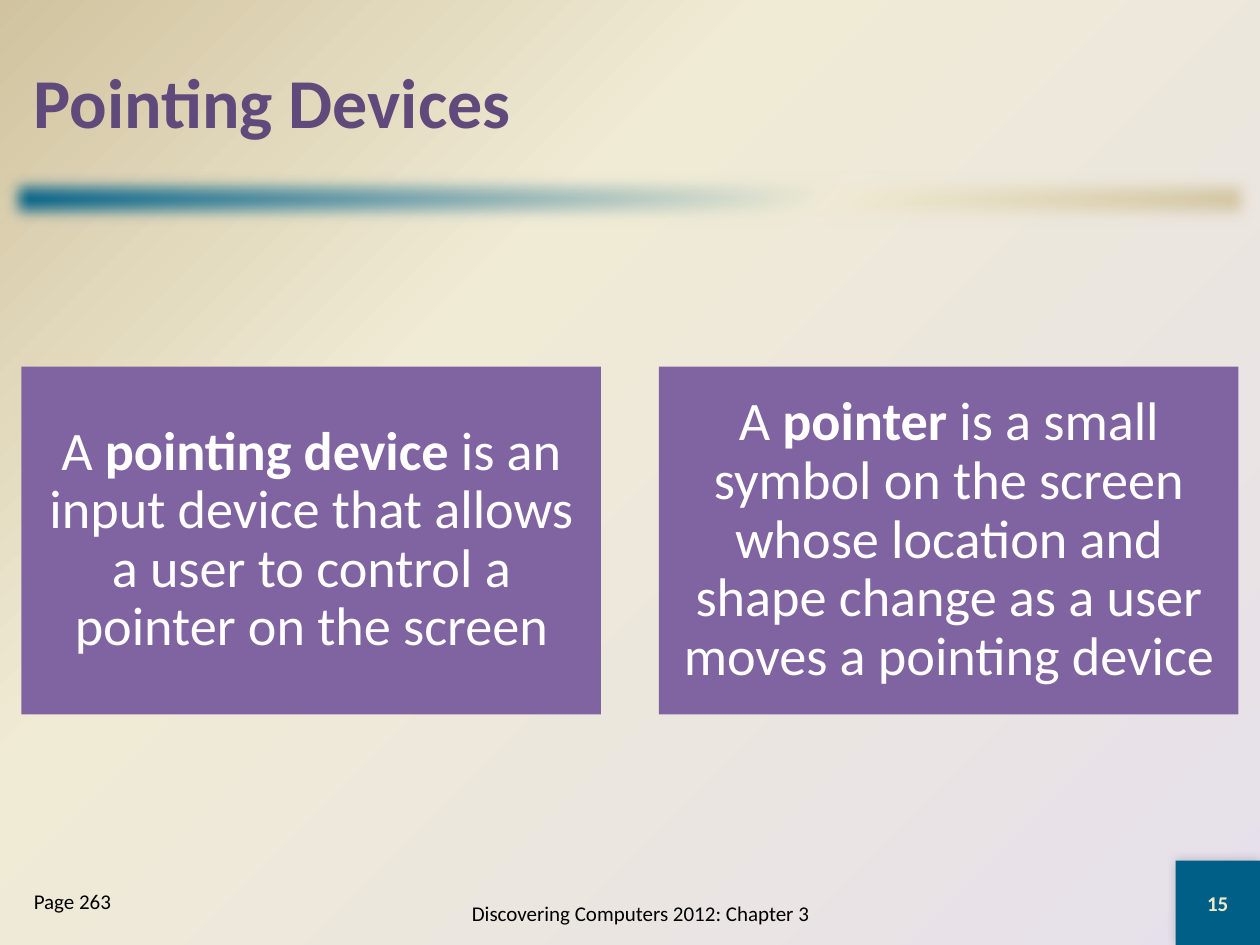
from lxml import etree
from pptx import Presentation
from pptx.dml.color import RGBColor
from pptx.enum.shapes import MSO_SHAPE
from pptx.enum.text import MSO_ANCHOR, PP_ALIGN
from pptx.oxml import parse_xml
from pptx.oxml.ns import nsdecls, qn
from pptx.util import Inches, Pt

RECTANGLE = MSO_SHAPE.RECTANGLE
TOP, MIDDLE = MSO_ANCHOR.TOP, MSO_ANCHOR.MIDDLE
LEFT, CENTER = PP_ALIGN.LEFT, PP_ALIGN.CENTER

COLORS = {
    "lavender": "E6E0EC", "cream": "F0EBD5", "tan": "D1C39F",
    "teal": "005F86", "purple": "8064A2", "title": "604A7B",
    "white": "FFFFFF", "black": "000000", "number": "EEEBCA",
}
FONT = "Calibri"
MARGIN = 0.17
CARD_WIDTH, CARD_HEIGHT, CARD_TOP, CARD_GAP = 4.6, 2.76, 2.91, 0.46
BADGE = 0.67

# Each definition is a list of (text, bold) runs.
DEFINITIONS = [
    [("A ", False), ("pointing device", True),
     (" is an input device that allows a user to control a pointer on the screen", False)],
    [("A ", False), ("pointer", True),
     (" is a small symbol on the screen whose location and shape change "
      "as a user moves a pointing device", False)],
]


def gradient(start, direction):
    """Gradient from the start colour through cream to tan."""
    stops = "".join(
        f'<a:gs pos="{percent * 1000}"><a:srgbClr val="{COLORS[name]}"/></a:gs>'
        for percent, name in ((0, start), (65, "cream"), (100, "tan")))
    return parse_xml(f'<a:gradFill {nsdecls("a")} rotWithShape="1">'
                     f'<a:gsLst>{stops}</a:gsLst>{direction}</a:gradFill>')


def set_background(slide):
    slide.background.fill.solid()
    properties = slide._element.find(".//" + qn("p:bgPr"))
    properties.replace(properties[0], gradient(
        "lavender", '<a:path path="circle"><a:fillToRect l="100000" t="100000"/></a:path>'))


def add_block(slide, box, color):
    block = slide.shapes.add_shape(RECTANGLE, *map(Inches, box))
    block.shadow.inherit = False
    block.fill.solid()
    block.fill.fore_color.rgb = RGBColor.from_string(COLORS[color])
    block.line.fill.background()
    return block


def add_divider(slide):
    """Full-width band with a gradient and soft edges."""
    divider = add_block(slide, (0, 1.33, 10, 0.5), "teal")
    properties = divider._element.spPr
    properties.replace(properties.find(qn("a:solidFill")),
                       gradient("teal", '<a:lin ang="2700000" scaled="1"/>'))
    effects = properties.find(qn("a:effectLst"))
    etree.SubElement(effects, qn("a:softEdge"), rad=str(Pt(10)))


def add_glow_shadow(shape):
    effects = shape._element.spPr.find(qn("a:effectLst"))
    shadow = etree.SubElement(effects, qn("a:outerShdw"), blurRad=str(Pt(6)),
                              dist="0", dir="13500000", rotWithShape="0")
    color = etree.SubElement(shadow, qn("a:srgbClr"), val=COLORS["black"])
    etree.SubElement(color, qn("a:alpha"), val="20000")


def write(shape, runs, size, color, align=CENTER, anchor=MIDDLE, inset=None, spacing=None):
    frame = shape.text_frame
    frame.word_wrap = True
    frame.vertical_anchor = anchor
    if inset is not None:
        for side in ("left", "top", "right", "bottom"):
            setattr(frame, f"margin_{side}", Inches(inset))
    paragraph = frame.paragraphs[0]
    paragraph.alignment = align
    paragraph.line_spacing = spacing
    for text, bold in runs:
        run = paragraph.add_run()
        run.text = text
        for name, value in {"name": FONT, "size": Pt(size), "bold": bold}.items():
            setattr(run.font, name, value)
        run.font.color.rgb = RGBColor.from_string(COLORS[color])


def add_label(slide, box, text, size, color, bold=False, **layout):
    label = slide.shapes.add_textbox(*map(Inches, box))
    write(label, [(text, bold)], size, color, **layout)


def add_definitions(slide):
    for column, runs in enumerate(DEFINITIONS):
        left = MARGIN + column * (CARD_WIDTH + CARD_GAP)
        card = add_block(slide, (left, CARD_TOP, CARD_WIDTH, CARD_HEIGHT), "purple")
        write(card, runs, 31, "white", inset=0.13, spacing=0.9)


def add_page_number(slide, number):
    badge = add_block(slide, (10 - BADGE, 7.5 - BADGE, BADGE, BADGE), "teal")
    add_glow_shadow(badge)
    write(badge, [(number, True)], 12, "number")


def main():
    deck = Presentation()
    deck.slide_width, deck.slide_height = Inches(10), Inches(7.5)
    slide = deck.slides.add_slide(deck.slide_layouts[6])
    set_background(slide)
    add_divider(slide)
    add_label(slide, (MARGIN, 0.17, 9.67, 1.25), "Pointing Devices", 40, "title",
              bold=True, align=LEFT)
    add_definitions(slide)
    add_label(slide, (3, 7, 4.17, 0.5), "Discovering Computers 2012: Chapter 3", 12, "black")
    add_page_number(slide, "15")
    add_label(slide, (MARGIN, 7, 1.83, 0.5), "Page 263", 12, "black",
              align=LEFT, anchor=TOP)
    deck.save("out.pptx")


if __name__ == "__main__":
    main()
